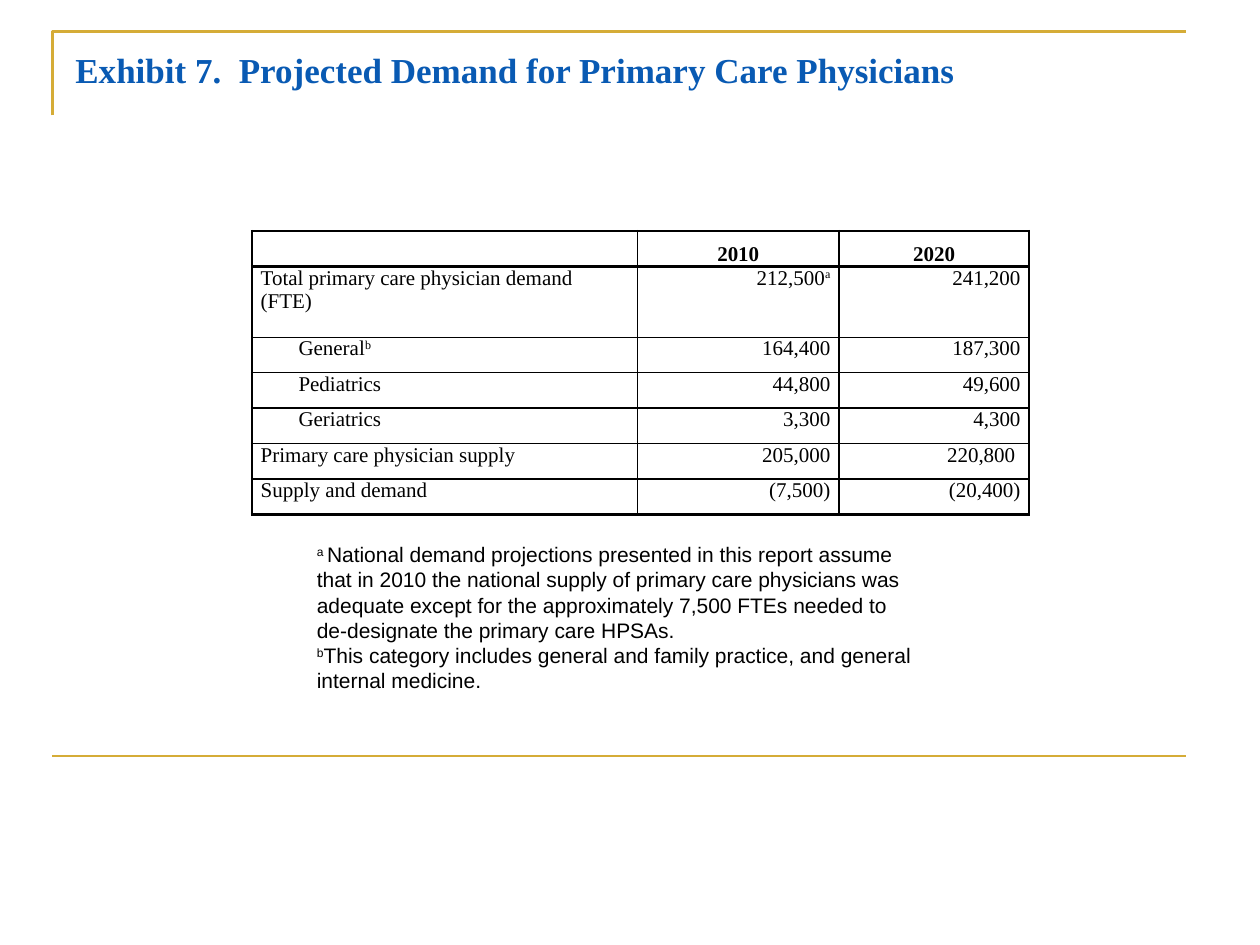
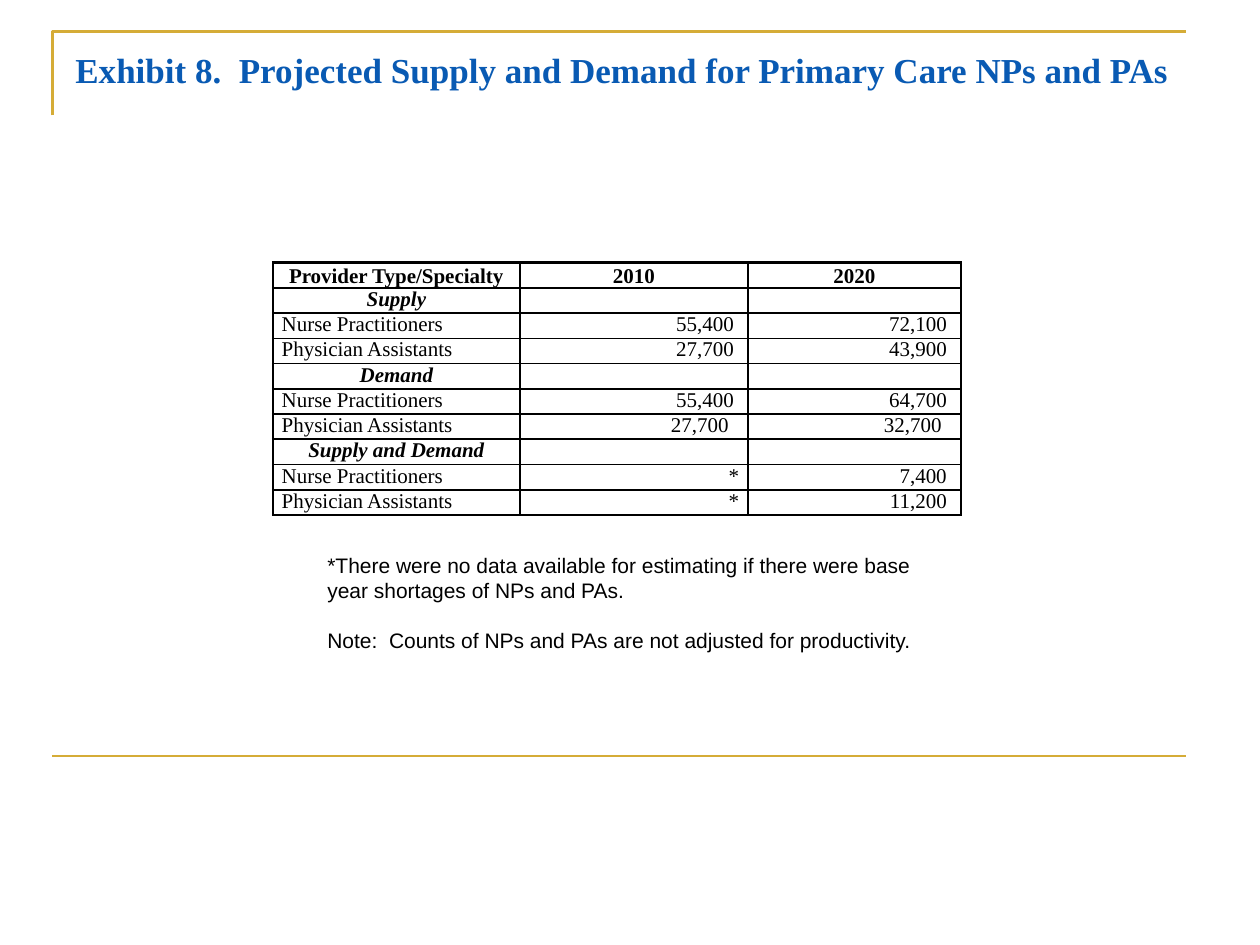
from pptx import Presentation
from pptx.dml.color import RGBColor
from pptx.enum.shapes import MSO_CONNECTOR
from pptx.enum.text import MSO_ANCHOR, PP_ALIGN
from pptx.oxml.ns import qn
from pptx.util import Pt
from lxml.etree import SubElement

GOLD, BLUE, BLACK = "D5AC37", "095AB3", "000000"
SERIF, SANS = "Times New Roman", "Arial"
THIN, HEAVY = 1, 1.5
RULE_LEFT, RULE_RIGHT = 30, 678
CELL_MARGIN = 5
SPACE = 3  # width of one space at the table's text size

EXHIBITS = [
    {
        "title": "Exhibit 7.  Projected Demand for Primary Care Physicians",
        "left": 144, "top": 132,
        "widths": [220.3, 115.2, 108.7],
        "heights": [20.25, 40.5] + [20.25] * 5,
        "rows": [
            ["", "2010", "2020"],
            ["Total primary care physician demand (FTE)", "212,500^a", "241,200"],
            ["General^b", "164,400", "187,300"],
            ["Pediatrics", "44,800", "49,600"],
            ["Geriatrics", "3,300", "4,300"],
            ["Primary care physician supply", "205,000", "220,800"],
            ["Supply and demand", "(7,500)", "(20,400)"],
        ],
        "indented_rows": [2, 3, 4],
        "right_gaps": {(5, 2): SPACE},
        "heavy_below": [0, 6],
        "heavy_right": range(7),
        "notes_at": (174, 306, 360, 94.3),
        "notes": [
            "^a ^National demand projections presented in this report assume that in 2010 "
            "the national supply of primary care physicians was adequate except for the "
            "approximately 7,500 FTEs needed to de-designate the primary care HPSAs.",
            "^b^This category includes general and family practice, and general internal medicine.",
        ],
        "notes_gap": 0,
    },
    {
        "title": "Exhibit 8.  Projected Supply and Demand for Primary Care NPs and PAs",
        "left": 156, "top": 150,
        "widths": [141.1, 130.3, 121.7],
        "heights": [13.3] * 10,
        "rows": [
            ["Provider Type/Specialty", "2010", "2020"],
            ["Supply", "", ""],
            ["Nurse Practitioners", "55,400", "72,100"],
            ["Physician Assistants", "27,700", "43,900"],
            ["Demand", "", ""],
            ["Nurse Practitioners", "55,400", "64,700"],
            ["Physician Assistants", "27,700", "32,700"],
            ["Supply and Demand", "", ""],
            ["Nurse Practitioners", "*", "7,400"],
            ["Physician Assistants", "*", "11,200"],
        ],
        "indented_rows": [],
        "right_gaps": {
            **{(row, column): SPACE for row in (2, 3, 5) for column in (1, 2)},
            (6, 1): 2 * SPACE, (6, 2): 2 * SPACE, (8, 2): SPACE, (9, 2): SPACE,
        },
        "heavy_below": [0, 6, 9],
        "heavy_right": range(4),
        "notes_at": (180, 312, 360, 65.5),
        "notes": [
            "*There were no data available for estimating if there were base year shortages of NPs and PAs.",
            "Note:  Counts of NPs and PAs are not adjusted for productivity.",
        ],
        "notes_gap": 14.3,
    },
]


def color(value):
    return RGBColor.from_string(value)


def add_runs(paragraph, text, font_name, size, font_color=BLACK, bold=False, italic=False):
    """Add the text as runs; every second part between ^ marks is superscript."""
    for index, part in enumerate(text.split("^")):
        if not part:
            continue
        run = paragraph.add_run()
        run.text = part
        run.font.name, run.font.size = font_name, Pt(size)
        run.font.bold, run.font.italic = bold, italic
        run.font.color.rgb = color(font_color)
        if index % 2:
            run.font._element.set("baseline", "30000")


presentation = Presentation()
presentation.slide_width, presentation.slide_height = Pt(720), Pt(540)

for exhibit in EXHIBITS:
    slide = presentation.slides.add_slide(presentation.slide_layouts[6])

    # Gold frame and rule
    builder = slide.shapes.build_freeform(Pt(RULE_LEFT), Pt(66))
    builder.add_line_segments(
        [(Pt(RULE_LEFT), Pt(18)), (Pt(RULE_RIGHT), Pt(18))], close=False)
    frame = builder.convert_to_shape()
    frame.shadow.inherit = False
    frame.fill.background()
    rule = slide.shapes.add_connector(
        MSO_CONNECTOR.STRAIGHT, Pt(RULE_LEFT), Pt(432), Pt(RULE_RIGHT), Pt(432))
    SubElement(rule._element.spPr, qn("a:effectLst"))
    for shape in (frame, rule):
        shape.line.color.rgb = color(GOLD)
        shape.line.width = Pt(1.5)

    # Title
    title = slide.shapes.add_textbox(Pt(36), Pt(21.6), Pt(648), Pt(38.4)).text_frame
    title.word_wrap = True
    title.margin_top = Pt(6)
    add_runs(title.paragraphs[0], exhibit["title"], SERIF, 20, BLUE, bold=True)

    # Table
    rows, widths, heights = exhibit["rows"], exhibit["widths"], exhibit["heights"]
    table = slide.shapes.add_table(
        len(rows), len(widths), Pt(exhibit["left"]), Pt(exhibit["top"]),
        Pt(sum(widths)), Pt(sum(heights))).table
    table.first_row = table.horz_banding = False
    for column, width in zip(table.columns, widths):
        column.width = Pt(width)
    for row, height in zip(table.rows, heights):
        row.height = Pt(height)

    for row_index, texts in enumerate(rows):
        is_header = row_index == 0
        is_section = not any(texts[1:])
        for column_index, text in enumerate(texts):
            cell = table.cell(row_index, column_index)
            is_label = column_index == 0
            indent = 21.6 if is_label and row_index in exhibit["indented_rows"] else 0
            right_gap = exhibit["right_gaps"].get((row_index, column_index), 0)
            cell.margin_left = Pt(CELL_MARGIN + indent)
            cell.margin_right = Pt(CELL_MARGIN + right_gap)
            cell.margin_top = cell.margin_bottom = Pt(0)
            cell.vertical_anchor = MSO_ANCHOR.BOTTOM if is_header else MSO_ANCHOR.TOP

            paragraph = cell.text_frame.paragraphs[0]
            if is_header or is_section:
                paragraph.alignment = PP_ALIGN.CENTER
            else:
                paragraph.alignment = PP_ALIGN.LEFT if is_label else PP_ALIGN.RIGHT
            add_runs(paragraph, text, SERIF, 12,
                     bold=is_header or is_section, italic=is_section)
            if not text:
                SubElement(paragraph._p, qn("a:endParaRPr"), sz="1200")

            is_last_column = column_index == len(texts) - 1
            heavy_edges = {
                "a:lnL": is_label,
                "a:lnR": is_last_column and row_index in exhibit["heavy_right"],
                "a:lnT": is_header or row_index - 1 in exhibit["heavy_below"],
                "a:lnB": row_index in exhibit["heavy_below"],
            }
            properties = cell._tc.get_or_add_tcPr()
            for tag, is_heavy in heavy_edges.items():
                line_width = Pt(HEAVY if is_heavy else THIN)
                border = SubElement(properties, qn(tag), w=str(line_width))
                fill = SubElement(border, qn("a:solidFill"))
                SubElement(fill, qn("a:srgbClr"), val=BLACK)
            cell.fill.background()

    # Notes below the table
    notes = slide.shapes.add_textbox(*map(Pt, exhibit["notes_at"])).text_frame
    notes.word_wrap = True
    for index, text in enumerate(exhibit["notes"]):
        paragraph = notes.add_paragraph() if index else notes.paragraphs[0]
        if index:
            paragraph.space_before = Pt(exhibit["notes_gap"])
        add_runs(paragraph, text, SANS, 12)

presentation.save("out.pptx")
